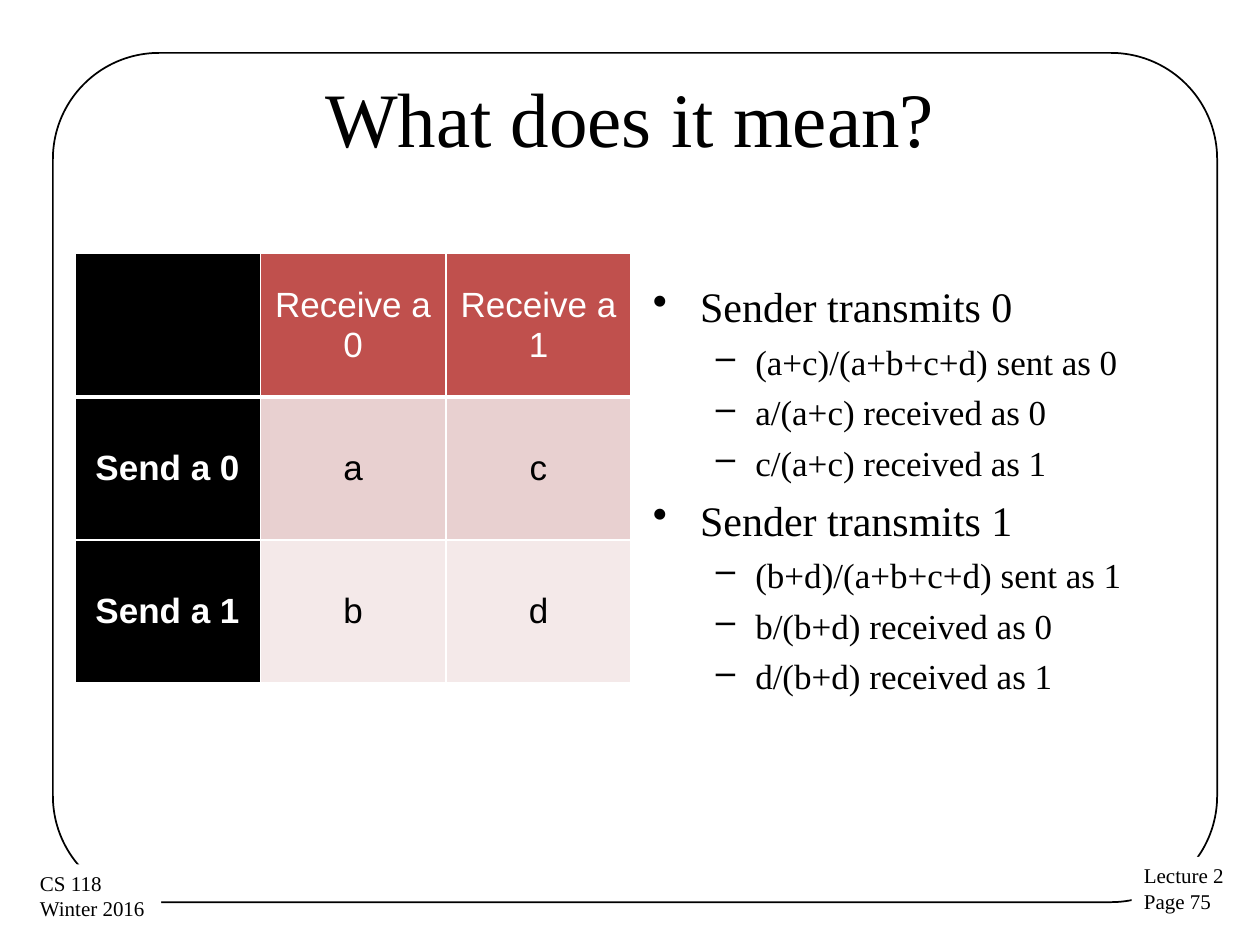
from dataclasses import dataclass
from typing import Any

from lxml import etree
from pptx import Presentation
from pptx import util as u
from pptx.dml.color import RGBColor
from pptx.enum import shapes, text
from pptx.oxml.ns import qn

BLACK, WHITE = "000000", "FFFFFF"
SERIF, SANS = "Times New Roman", "Arial"


@dataclass(frozen=True)
class Box:
    left: float
    top: float
    width: float
    height: float

    def lengths(self) -> list[u.Length]:
        return [u.Pt(value) for value in (self.left, self.top, self.width, self.height)]


@dataclass(frozen=True)
class Footer:
    box: Box
    lines: tuple[str, ...]


@dataclass(frozen=True)
class Level:
    bullet: str
    size: float
    left: float
    hanging: float
    space_before: float


@dataclass(frozen=True)
class Cell:
    content: str
    fill: str
    color: str = BLACK
    bold: bool = False


FOOTERS = (
    Footer(Box(646.6, 489.6, 60.5, 36.7), ("Lecture 2", "Page 75")),
    Footer(Box(15.8, 493.9, 76.3, 36.7), ("CS 118", "Winter 2016")),
)

TOPIC = Level("•", 24, 27, 27, 6)
DETAIL = Level("–", 20, 58.5, 22.5, 5)
BULLETS = (
    (TOPIC, "Sender transmits 0"),
    (DETAIL, "(a+c)/(a+b+c+d) sent as 0"),
    (DETAIL, "a/(a+c) received as 0"),
    (DETAIL, "c/(a+c) received as 1"),
    (TOPIC, "Sender transmits 1"),
    (DETAIL, "(b+d)/(a+b+c+d) sent as 1"),
    (DETAIL, "b/(b+d) received as 0"),
    (DETAIL, "d/(b+d) received as 1"),
)

RED, ROSE, PALE = "C0504D", "E8D0D0", "F4E9E9"
CELLS = (
    (Cell("", BLACK), Cell("Receive a 0", RED, WHITE), Cell("Receive a 1", RED, WHITE)),
    (Cell("Send a 0", BLACK, WHITE, True), Cell("a", ROSE), Cell("c", ROSE)),
    (Cell("Send a 1", BLACK, WHITE, True), Cell("b", PALE), Cell("d", PALE)),
)


def rgb(value: str) -> RGBColor:
    return RGBColor.from_string(value)


def apply(target: Any, values: dict[str, Any]) -> None:
    for name, value in values.items():
        setattr(target, name, value)


def write(paragraph: Any, content: str, size: float, font: str = SERIF,
          color: str = BLACK, bold: bool = False) -> None:
    run = paragraph.add_run()
    run.text = content
    apply(run.font, {"size": u.Pt(size), "name": font, "bold": bold})
    run.font.color.rgb = rgb(color)


def next_paragraph(frame: Any, index: int) -> Any:
    return frame.add_paragraph() if index else frame.paragraphs[0]


def draw_frame(slide: Any, box: Box) -> None:
    shape = slide.shapes.add_shape(shapes.MSO_SHAPE.ROUNDED_RECTANGLE, *box.lengths())
    shape.adjustments[0] = 0.125
    shape.shadow.inherit = False
    shape.fill.background()
    shape.line.color.rgb = rgb(BLACK)
    shape.line.width = u.Pt(1)


def draw_footer(slide: Any, footer: Footer) -> None:
    shape = slide.shapes.add_textbox(*footer.box.lengths())
    shape.fill.solid()
    shape.fill.fore_color.rgb = rgb(WHITE)
    shape.text_frame.word_wrap = False
    for index, line in enumerate(footer.lines):
        write(next_paragraph(shape.text_frame, index), line, 12)


def draw_title(slide: Any, box: Box, content: str) -> None:
    frame = slide.shapes.add_textbox(*box.lengths()).text_frame
    apply(frame, {"word_wrap": True, "vertical_anchor": text.MSO_ANCHOR.MIDDLE})
    frame.paragraphs[0].alignment = text.PP_ALIGN.CENTER
    write(frame.paragraphs[0], content, 44)


def draw_bullets(slide: Any, box: Box) -> None:
    frame = slide.shapes.add_textbox(*box.lengths()).text_frame
    frame.word_wrap = True
    for index, (level, content) in enumerate(BULLETS):
        paragraph = next_paragraph(frame, index)
        apply(paragraph, {"level": int(level is DETAIL),
                          "space_before": u.Pt(level.space_before)})
        write(paragraph, content, level.size)
        properties = paragraph._p.get_or_add_pPr()
        properties.set("marL", str(u.Pt(level.left)))
        properties.set("indent", str(-u.Pt(level.hanging)))
        etree.SubElement(properties, qn("a:buChar"), char=level.bullet)


def add_borders(cell: Any, bottom: float) -> None:
    properties = cell._tc.get_or_add_tcPr()
    widths = {"lnL": 1, "lnR": 1, "lnT": 1, "lnB": bottom}
    # Borders come before the fill in a cell's properties
    for position, (side, width) in enumerate(widths.items()):
        line = etree.Element(qn(f"a:{side}"), w=str(u.Pt(width)))
        fill = etree.SubElement(line, qn("a:solidFill"))
        etree.SubElement(fill, qn("a:srgbClr"), val=WHITE)
        properties.insert(position, line)


def draw_table(slide: Any, box: Box) -> None:
    table = slide.shapes.add_table(len(CELLS), len(CELLS[0]), *box.lengths()).table
    for row, entries in enumerate(CELLS):
        for column, entry in enumerate(entries):
            cell = table.cell(row, column)
            apply(cell, {
                "vertical_anchor": text.MSO_ANCHOR.MIDDLE,
                "margin_left": u.Pt(4.5), "margin_right": u.Pt(4.5),
                "margin_top": u.Pt(3), "margin_bottom": u.Pt(3),
            })
            cell.fill.solid()
            cell.fill.fore_color.rgb = rgb(entry.fill)
            add_borders(cell, bottom=1 if row else 3)
            if entry.content:
                paragraph = cell.text_frame.paragraphs[0]
                paragraph.alignment = text.PP_ALIGN.CENTER
                write(paragraph, entry.content, 20, SANS, entry.color, entry.bold)


def main() -> None:
    presentation = Presentation()
    apply(presentation, {"slide_width": u.Pt(720), "slide_height": u.Pt(540)})
    slide = presentation.slides.add_slide(presentation.slide_layouts[6])

    # Border and the footers that interrupt it
    draw_frame(slide, Box(30.24, 30.24, 665.3, 485.3))
    for footer in FOOTERS:
        draw_footer(slide, footer)

    # Title, probability table and explanation
    draw_title(slide, Box(36, 21.6, 648, 90), "What does it mean?")
    draw_table(slide, Box(42.75, 145, 318, 245.4))
    draw_bullets(slide, Box(366, 157, 318, 325))

    presentation.save("out.pptx")


if __name__ == "__main__":
    main()
